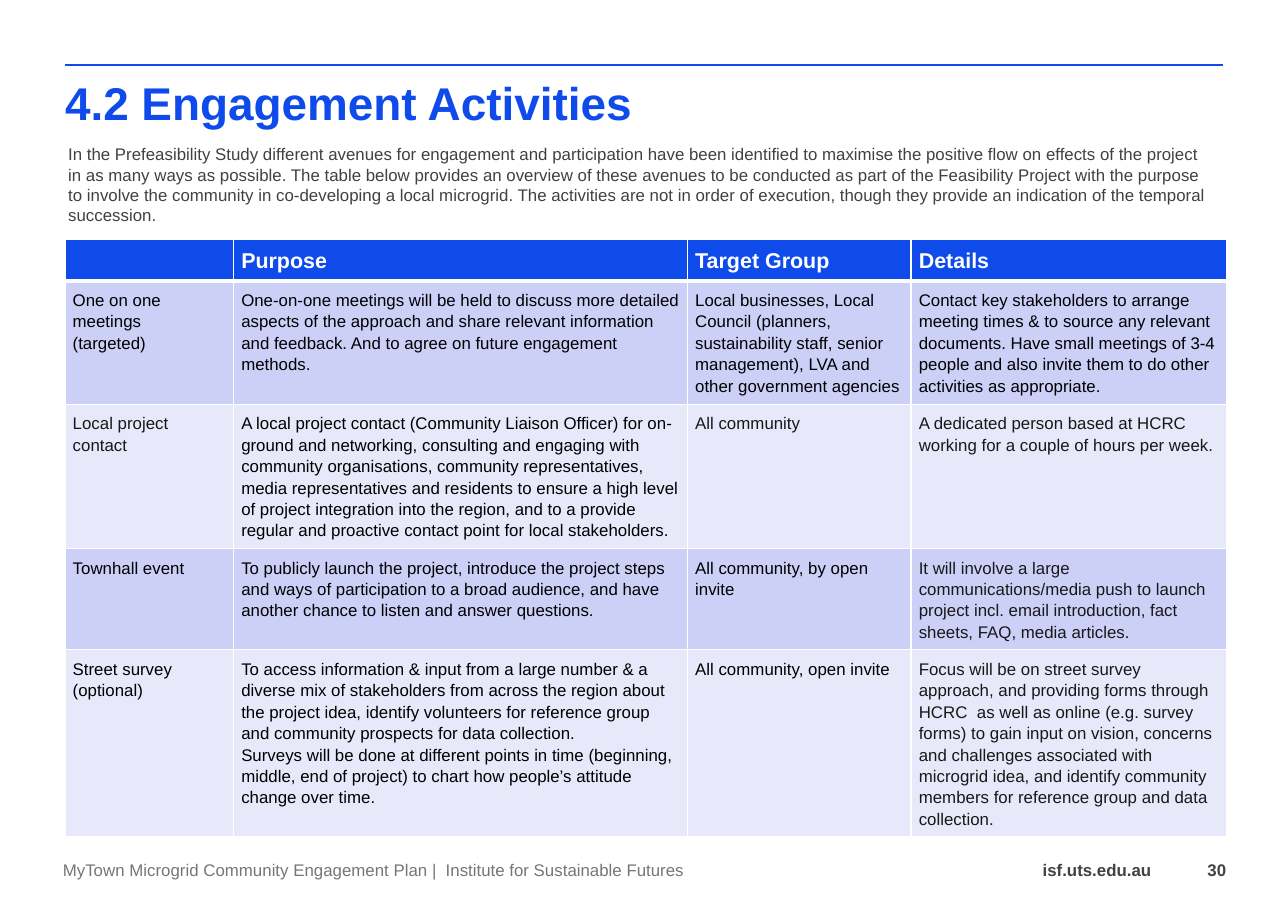
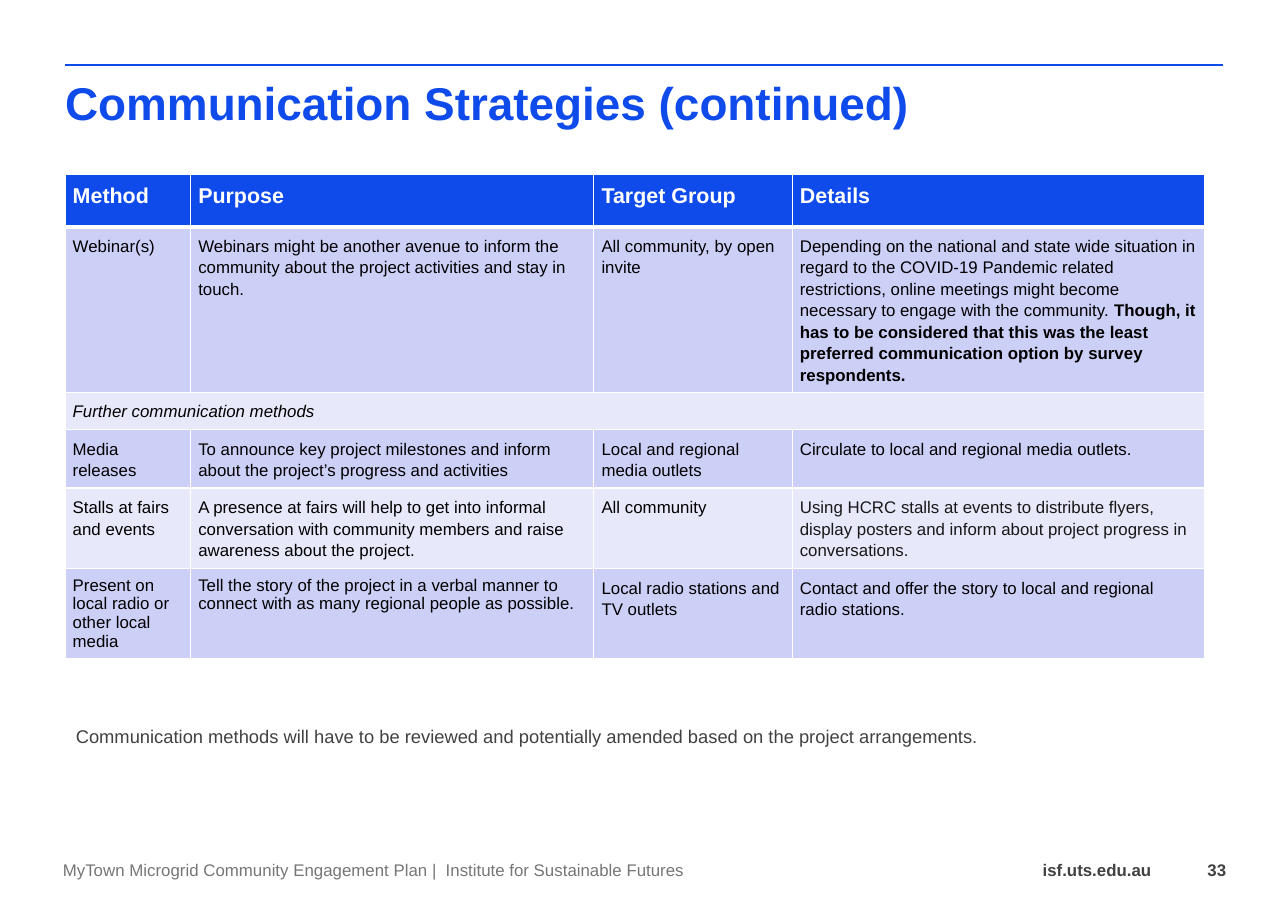
from dataclasses import dataclass

import pptx
import pptx.dml.color
import pptx.enum.shapes
import pptx.enum.text
import pptx.oxml.ns
import pptx.util
from lxml import etree

Inches = pptx.util.Inches
Pt = pptx.util.Pt
Align = pptx.enum.text.PP_ALIGN
Anchor = pptx.enum.text.MSO_ANCHOR
qn = pptx.oxml.ns.qn


@dataclass(frozen=True)
class Theme:
    font: str = "Arial"
    blue: str = "0F4BEB"
    white: str = "FFFFFF"
    band_dark: str = "CCD0F7"
    band_light: str = "E7E9FB"
    black: str = "000000"
    soft_black: str = "181818"
    slate: str = "414042"
    grey: str = "767676"
    title_size: int = 30
    header_size: int = 14
    note_size: int = 12
    text_size: int = 11
    cell_inset: float = 0.07
    header_leading: float = 17
    cell_leading: float = 14
    tight_leading: float = 12.2


THEME = Theme()
LEFT = 0.59
CONTENT_WIDTH = 10.51
FOOTER_TOP, FOOTER_HEIGHT = 7.74, 0.31


@dataclass(frozen=True)
class Cell:
    text: str
    colour: str = THEME.black
    leading: float = THEME.cell_leading
    italic: bool = False
    bold_ending: str = ""


def soft(text):
    """A cell in the softer black."""
    return Cell(text, THEME.soft_black)


def tight(text):
    """A cell with closer lines."""
    return Cell(text, leading=THEME.tight_leading)


def rgb(value):
    return pptx.dml.color.RGBColor.from_string(value)


def add_span(para, text, size, colour, bold=False, italic=False):
    span = para.add_run()
    span.text = text
    span.font.name = THEME.font
    span.font.size = Pt(size)
    span.font.color.rgb = rgb(colour)
    span.font.bold = bold
    span.font.italic = italic


def set_insets(target, inset):
    target.margin_left = target.margin_right = Inches(inset)
    target.margin_top = target.margin_bottom = Inches(inset)


def add_text(page, at, text, size, colour, bold=False, align=Align.LEFT,
             anchor=Anchor.TOP, inset=None):
    box = page.shapes.add_textbox(*map(Inches, at))
    frame = box.text_frame
    frame.word_wrap = True
    frame.vertical_anchor = anchor
    if inset is not None:
        set_insets(frame, inset)
    para = frame.paragraphs[0]
    para.alignment = align
    add_span(para, text, size, colour, bold)


def add_title(page, text):
    title = page.shapes.title
    title.left, title.top = Inches(LEFT), Inches(0.73)
    title.width, title.height = Inches(CONTENT_WIDTH), Inches(0.55)
    frame = title.text_frame
    frame.auto_size = pptx.enum.text.MSO_AUTO_SIZE.NONE
    frame.vertical_anchor = Anchor.TOP
    set_insets(frame, 0)
    para = frame.paragraphs[0]
    para.alignment = Align.LEFT
    para.line_spacing = 0.9
    add_span(para, text, THEME.title_size, THEME.blue, bold=True)


def add_rule(page):
    rule = page.shapes.add_connector(
        pptx.enum.shapes.MSO_CONNECTOR.STRAIGHT, Inches(LEFT), Inches(0.59),
        Inches(LEFT + CONTENT_WIDTH), Inches(0.59))
    rule.line.color.rgb = rgb(THEME.blue)
    rule.line.width = Pt(1.5)
    etree.SubElement(rule._element.spPr, qn("a:effectLst"))


def add_footer(page, number):
    def add_part(left, width, text, **style):
        add_text(page, (left, FOOTER_TOP, width, FOOTER_HEIGHT), text,
                 THEME.text_size, anchor=Anchor.MIDDLE, **style)

    strong = {"colour": THEME.slate, "bold": True, "align": Align.RIGHT}
    add_part(0.57, 5.91,
             "MyTown Microgrid Community Engagement Plan |  Institute for Sustainable Futures",
             colour=THEME.grey, inset=0)
    add_part(8.49, 2.06, "isf.uts.edu.au", **strong)
    add_part(10.66, 0.47, str(number), inset=0, **strong)


def add_page(deck, title, number):
    """A page with the shared rule, title and footer."""
    page = deck.slides.add_slide(deck.slide_layouts.get_by_name("Title Only"))
    add_rule(page)
    add_title(page, title)
    add_footer(page, number)
    return page


def set_borders(cell, bottom_width):
    properties = cell._tc.get_or_add_tcPr()
    widths = {"a:lnL": 1, "a:lnR": 1, "a:lnT": 1, "a:lnB": bottom_width}
    for position, (tag, width) in enumerate(widths.items()):
        line = etree.Element(qn(tag), w=str(Pt(width)))
        fill = etree.SubElement(line, qn("a:solidFill"))
        etree.SubElement(fill, qn("a:srgbClr"), val=THEME.white)
        properties.insert(position, line)


def paint_cell(cell, fill, bottom_width=1):
    cell.fill.solid()
    cell.fill.fore_color.rgb = rgb(fill)
    set_insets(cell, THEME.cell_inset)
    set_borders(cell, bottom_width)


def write_cell(cell, content, size, bold=False):
    frame = cell.text_frame
    for index, line in enumerate(content.text.split("\n")):
        para = frame.add_paragraph() if index else frame.paragraphs[0]
        para.line_spacing = Pt(content.leading)
        if line:
            add_span(para, line, size, content.colour, bold, content.italic)
        else:
            etree.SubElement(para._p, qn("a:endParaRPr"), sz=str(size * 100))
    if content.bold_ending:
        add_span(para, content.bold_ending, size, content.colour, bold=True)


def add_activity_table(page, top, widths, heights, headings, rows):
    """A header and banded rows; a row of one cell spans all columns."""
    table = page.shapes.add_table(
        len(heights), len(widths), Inches(LEFT), Inches(top),
        Inches(sum(widths)), Inches(sum(heights))).table
    for column, width in zip(table.columns, widths):
        column.width = Inches(width)
    for row, height in zip(table.rows, heights):
        row.height = Inches(height)

    for column, heading in enumerate(headings):
        cell = table.cell(0, column)
        paint_cell(cell, THEME.blue, bottom_width=3)
        write_cell(cell, Cell(heading, THEME.white, THEME.header_leading),
                   THEME.header_size, bold=True)

    for row, contents in enumerate(rows, start=1):
        band = THEME.band_dark if row % 2 else THEME.band_light
        for column in range(len(widths)):
            paint_cell(table.cell(row, column), band)
        if len(contents) == 1:
            table.cell(row, 0).merge(table.cell(row, len(widths) - 1))
        for column, content in enumerate(contents):
            if isinstance(content, str):
                content = Cell(content)
            write_cell(table.cell(row, column), content, THEME.text_size)


ENGAGEMENT_ROWS = [
    ["One on one meetings\n(targeted)",
     "One-on-one meetings will be held to discuss more detailed aspects of the approach and "
     "share relevant information and feedback. And to agree on future engagement methods.",
     "Local businesses, Local Council (planners, sustainability staff, senior management), "
     "LVA and other government agencies",
     "Contact key stakeholders to arrange meeting times & to source any relevant documents. "
     "Have small meetings of 3-4 people and also invite them to do other activities as "
     "appropriate."],
    [soft("Local project contact"),
     "A local project contact (Community Liaison Officer) for on‐ground and networking, "
     "consulting and engaging with community organisations, community representatives, media "
     "representatives and residents to ensure a high level of project integration into the "
     "region, and to a provide regular and proactive contact point for local stakeholders.",
     soft("All community"),
     soft("A dedicated person based at HCRC working for a couple of hours per week.")],
    ["Townhall event",
     "To publicly launch the project, introduce the project steps and ways of participation "
     "to a broad audience, and have another chance to listen and answer questions.",
     "All community, by open invite",
     soft("It will involve a large communications/media push to launch project incl. email "
          "introduction, fact sheets, FAQ, media articles.")],
    ["Street survey\n(optional)",
     "To access information & input from a large number & a diverse mix of stakeholders from "
     "across the region about the project idea, identify volunteers for reference group and "
     "community prospects for data collection.\n"
     "Surveys will be done at different points in time (beginning, middle, end of project) to "
     "chart how people’s attitude change over time.",
     "All community, open invite",
     soft("Focus will be on street survey approach, and providing forms through HCRC  as well "
          "as online (e.g. survey forms) to gain input on vision, concerns and challenges "
          "associated with microgrid idea, and identify community members for reference group "
          "and data collection.")],
]

COMMUNICATION_ROWS = [
    ["Webinar(s)",
     "Webinars might be another avenue to inform the community about the project activities "
     "and stay in touch.",
     "All community, by open invite",
     Cell("Depending on the national and state wide situation in regard to the COVID-19 "
          "Pandemic related restrictions, online meetings might become necessary to engage "
          "with the community. ",
          bold_ending="Though, it has to be considered that this was the least preferred "
                      "communication option by survey respondents.")],
    [Cell("Further communication methods", italic=True)],
    ["Media releases",
     "To announce key project milestones and inform about the project’s progress and "
     "activities",
     "Local and regional media outlets",
     "Circulate to local and regional media outlets."],
    ["Stalls at fairs and events",
     "A presence at fairs will help to get into informal conversation with community members "
     "and raise awareness about the project.",
     "All community",
     soft("Using HCRC stalls at events to distribute flyers, display posters and inform about "
          "project progress in conversations.")],
    [tight("Present on local radio or other local media"),
     tight("Tell the story of the project in a verbal manner to connect with as many regional "
           "people as possible."),
     "Local radio stations and TV outlets",
     "Contact and offer the story to local and regional radio stations."],
]


def build_engagement_page(deck):
    page = add_page(deck, "4.2 Engagement Activities", 30)
    add_activity_table(page, 2.17, [1.53, 4.12, 2.03, 2.86], [0.38, 1.12, 1.31, 0.92, 1.7],
                       ["", "Purpose", "Target Group", "Details"], ENGAGEMENT_ROWS)
    add_text(page, (0.52, 1.26, 10.58, 0.84),
             "In the Prefeasibility Study different avenues for engagement and participation "
             "have been identified to maximise the positive flow on effects of the project in "
             "as many ways as possible. The table below provides an overview of these avenues "
             "to be conducted as part of the Feasibility Project with the purpose to involve "
             "the community in co-developing a local microgrid. The activities are not in "
             "order of execution, though they provide an indication of the temporal "
             "succession.", THEME.text_size, THEME.slate)


def build_communication_page(deck):
    page = add_page(deck, "Communication Strategies (continued)", 33)
    add_activity_table(page, 1.58, [1.14, 3.66, 1.8, 3.74],
                       [0.48, 1.5, 0.34, 0.53, 0.73, 0.82],
                       ["Method", "Purpose", "Target Group", "Details"], COMMUNICATION_ROWS)
    add_text(page, (LEFT, 6.53, 10.34, 0.3),
             "Communication methods will have to be reviewed and potentially amended based on "
             "the project arrangements.", THEME.note_size, THEME.slate)


def main():
    deck = pptx.Presentation()
    deck.slide_width, deck.slide_height = Inches(11.69), Inches(8.27)
    build_engagement_page(deck)
    build_communication_page(deck)
    deck.save("out.pptx")


if __name__ == "__main__":
    main()
